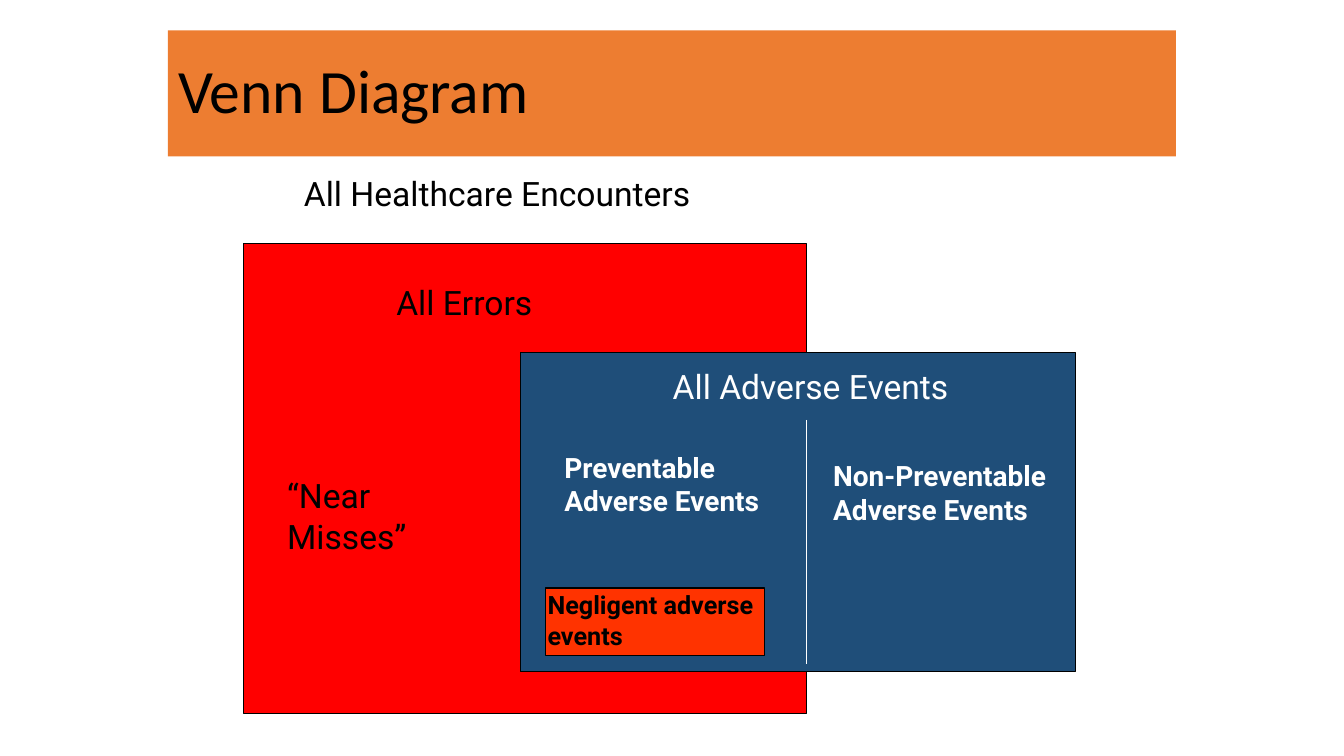
"""Build a Venn diagram slide of healthcare errors and adverse events."""
from dataclasses import dataclass

import pptx
import pptx.dml.color
import pptx.enum.shapes
import pptx.enum.text
import pptx.oxml.ns
import pptx.slide
import pptx.util
from lxml import etree

RGBColor = pptx.dml.color.RGBColor
ALIGN = pptx.enum.text.PP_ALIGN
PX = 9525

BLACK = RGBColor(0x00, 0x00, 0x00)
WHITE = RGBColor(0xFF, 0xFF, 0xFF)
ORANGE = RGBColor(0xED, 0x7D, 0x31)
RED = RGBColor(0xFF, 0x00, 0x00)
BLUE = RGBColor(0x1F, 0x4E, 0x79)
VERMILION = RGBColor(0xFF, 0x33, 0x00)


@dataclass(frozen=True)
class Box:
    left: int
    top: int
    width: int
    height: int

    def emu(self) -> tuple[int, ...]:
        return tuple(v * PX for v in (self.left, self.top, self.width, self.height))


@dataclass(frozen=True)
class Region:
    box: Box
    fill: RGBColor


@dataclass(frozen=True)
class Label:
    text: str
    box: Box
    size: int = 24
    color: RGBColor = BLACK
    bold: bool = False
    align: ALIGN = ALIGN.LEFT


REGIONS = [
    Region(Box(232, 232, 536, 448), RED),
    Region(Box(496, 336, 528, 304), BLUE),
    Region(Box(520, 560, 208, 64), VERMILION),
]

LABELS = [
    Label("All Healthcare Encounters", Box(280, 160, 480, 48)),
    Label("All Errors", Box(368, 264, 280, 48)),
    Label("“Near Misses”", Box(264, 448, 192, 87)),
    Label("All Adverse Events", Box(584, 344, 376, 48), color=WHITE, align=ALIGN.CENTER),
    Label("Preventable Adverse Events", Box(528, 424, 224, 74), 20, WHITE, True),
    Label("Non-Preventable Adverse Events", Box(784, 432, 224, 106), 20, WHITE, True),
    Label("Negligent adverse events", Box(512, 557, 224, 67), 18, BLACK, True),
]


def add_title(slide: pptx.slide.Slide, text: str, box: Box) -> None:
    """Format the title placeholder as a filled banner."""
    sp = slide.shapes.title
    sp.left, sp.top, sp.width, sp.height = box.emu()
    sp.fill.solid()
    sp.fill.fore_color.rgb = ORANGE
    tf = sp.text_frame
    tf.text = text
    tf.vertical_anchor = pptx.enum.text.MSO_ANCHOR.MIDDLE
    p = tf.paragraphs[0]
    p.alignment = ALIGN.LEFT
    p.line_spacing = 0.9
    p.font.name = "Calibri"
    p.font.size = pptx.util.Pt(44)
    p.font.color.rgb = BLACK


def add_region(slide: pptx.slide.Slide, region: Region) -> None:
    """Draw one outlined rectangle of the diagram."""
    sp = slide.shapes.add_shape(pptx.enum.shapes.MSO_SHAPE.RECTANGLE, *region.box.emu())
    sp.shadow.inherit = False
    sp.fill.solid()
    sp.fill.fore_color.rgb = region.fill
    sp.line.color.rgb = BLACK
    sp.line.width = pptx.util.Pt(0.75)


def add_label(slide: pptx.slide.Slide, label: Label) -> None:
    """Write one wrapped text label."""
    tf = slide.shapes.add_textbox(*label.box.emu()).text_frame
    tf.word_wrap = True
    tf.text = label.text
    p = tf.paragraphs[0]
    p.alignment = label.align
    p.font.name = "Roboto"
    p.font.size = pptx.util.Pt(label.size)
    p.font.bold = label.bold
    p.font.color.rgb = label.color


def add_divider(slide: pptx.slide.Slide, x: int, top: int, bottom: int) -> None:
    """Draw the vertical line between the two kinds of adverse events."""
    line = slide.shapes.add_connector(
        pptx.enum.shapes.MSO_CONNECTOR.STRAIGHT, x * PX, top * PX, x * PX, bottom * PX
    )
    line.line.color.rgb = WHITE
    line.line.width = pptx.util.Pt(0.75)
    etree.SubElement(line._element.spPr, pptx.oxml.ns.qn("a:effectLst"))


def main() -> None:
    """Assemble and save the slide."""
    prs = pptx.Presentation()
    prs.slide_width, prs.slide_height = 1280 * PX, 720 * PX
    slide = prs.slides.add_slide(prs.slide_layouts.get_by_name("Title Only"))
    add_title(slide, "Venn Diagram", Box(160, 29, 960, 120))
    for region in REGIONS:
        add_region(slide, region)
    add_divider(slide, 768, 400, 632)
    for label in LABELS:
        add_label(slide, label)
    prs.save("out.pptx")


if __name__ == "__main__":
    main()
